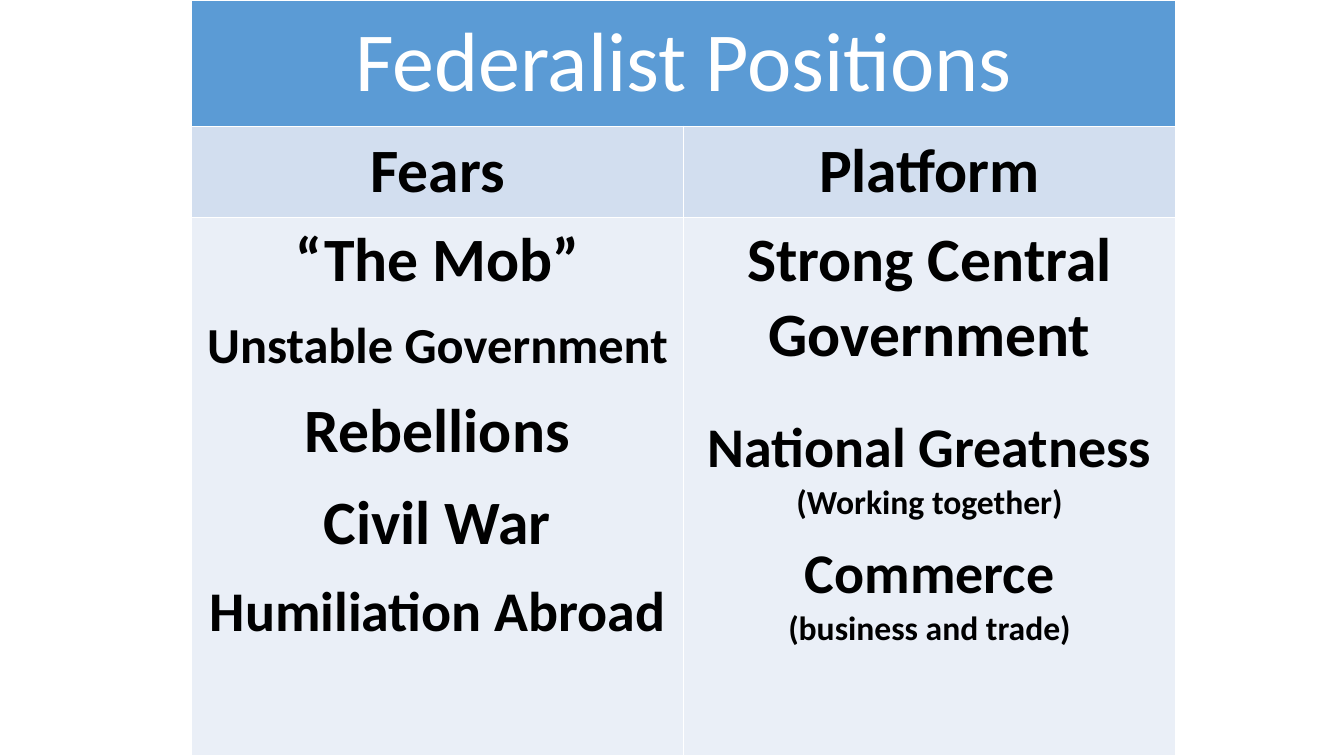
from lxml.etree import SubElement
from pptx import Presentation
from pptx.dml.color import RGBColor
from pptx.enum.text import MSO_ANCHOR, PP_ALIGN
from pptx.oxml.ns import qn
from pptx.util import Inches, Pt

SLIDE_WIDTH, SLIDE_HEIGHT = Inches(13.33), Inches(7.5)
TABLE_LEFT = Inches(1.9)
COLUMN_WIDTH = Inches(4.88)
ROW_SHARES = (0.167, 0.121, 0.712)  # of the slide height
WHITE, BLACK = "FFFFFF", "000000"
TITLE_FILL, HEADING_FILL, BODY_FILL = "5B9BD5", "D2DEEF", "EAEFF7"
SMALL_GAP, LARGE_GAP = 12.2, 29.3

# Each paragraph: space before, then its (text, size) runs
FEARS = [
    (0, [("“The Mob”", 44)]),
    (SMALL_GAP, [("Unstable Government", 36)]),
    (SMALL_GAP, [("Rebellions", 44)]),
    (SMALL_GAP, [("Civil War", 44)]),
    (SMALL_GAP, [("Humiliation Abroad", 40)]),
]
PLATFORM = [
    (0, [("Strong Central Government", 44)]),
    (LARGE_GAP, [("National Greatness ", 40), ("(Working together)", 24)]),
    (SMALL_GAP, [("Commerce", 40)]),
    (0, [("(business and trade)", 24)]),
]


def color(code):
    return RGBColor.from_string(code)


def add_borders(cell):
    """Draw a thin white line on every side; lines must precede the fill."""
    properties = cell._tc.get_or_add_tcPr()
    for side in ("a:lnL", "a:lnR", "a:lnT", "a:lnB"):
        line = SubElement(properties, qn(side), w=str(Pt(1)))
        line_fill = SubElement(line, qn("a:solidFill"))
        SubElement(line_fill, qn("a:srgbClr"), val=WHITE)


def style_cell(cell, fill):
    add_borders(cell)
    cell.fill.solid()
    cell.fill.fore_color.rgb = color(fill)


def write_cell(cell, paragraphs, text_color=BLACK, bold=True, anchor=MSO_ANCHOR.MIDDLE):
    cell.vertical_anchor = anchor
    frame = cell.text_frame
    for index, (gap, spans) in enumerate(paragraphs):
        para = frame.add_paragraph() if index else frame.paragraphs[0]
        para.alignment = PP_ALIGN.CENTER
        if gap:
            para.space_before = Pt(gap)
        for text, size in spans:
            span = para.add_run()
            span.text = text
            span.font.name = "Calibri"
            span.font.size = Pt(size)
            span.font.bold = bold
            span.font.color.rgb = color(text_color)


def add_positions_table(page):
    frame = page.shapes.add_table(3, 2, TABLE_LEFT, 0, 2 * COLUMN_WIDTH, SLIDE_HEIGHT)
    table = frame.table
    for column in table.columns:
        column.width = COLUMN_WIDTH
    fills = (TITLE_FILL, HEADING_FILL, BODY_FILL)
    for row, share, fill in zip(table.rows, ROW_SHARES, fills):
        row.height = int(SLIDE_HEIGHT * share)
        for cell in row.cells:
            style_cell(cell, fill)
    return table


def main():
    deck = Presentation()
    deck.slide_width, deck.slide_height = SLIDE_WIDTH, SLIDE_HEIGHT
    page = deck.slides.add_slide(deck.slide_layouts[6])
    table = add_positions_table(page)

    # Title row across both columns
    title = table.cell(0, 0)
    title.merge(table.cell(0, 1))
    write_cell(title, [(0, [("Federalist Positions", 60)])], WHITE, bold=False)

    # Headings with their lists
    for column, (heading, points) in enumerate([("Fears", FEARS), ("Platform", PLATFORM)]):
        write_cell(table.cell(1, column), [(0, [(heading, 44)])])
        write_cell(table.cell(2, column), points, anchor=MSO_ANCHOR.TOP)

    deck.save("out.pptx")


if __name__ == "__main__":
    main()
